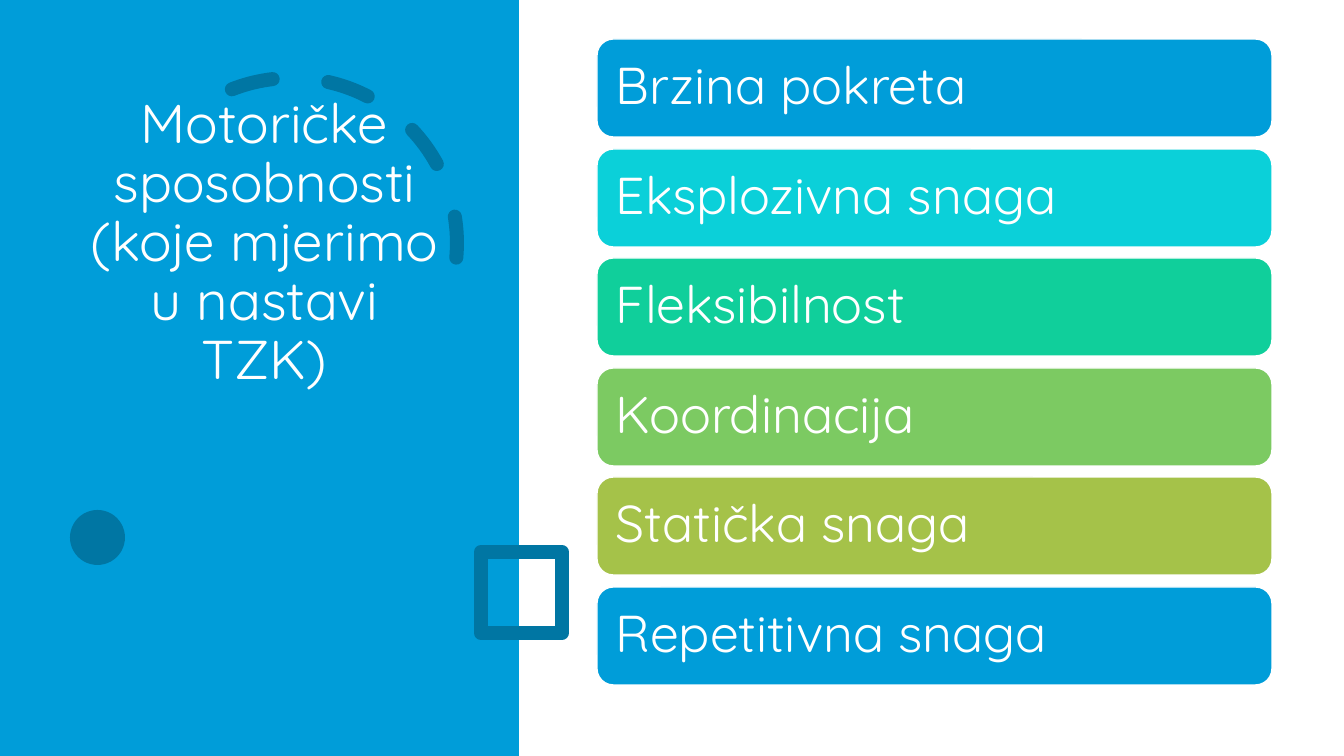
from dataclasses import dataclass

import pptx
import pptx.dml.color
import pptx.enum.dml
import pptx.enum.shapes
import pptx.enum.text
import pptx.oxml
import pptx.oxml.ns
import pptx.util

SHAPE = pptx.enum.shapes.MSO_SHAPE
ALIGN = pptx.enum.text.PP_ALIGN
ANCHOR = pptx.enum.text.MSO_ANCHOR
SLIDE_W, SLIDE_H = 1344, 756
EMU_PER_PX = pptx.util.Inches(1) / 100.8


@dataclass(frozen=True)
class Theme:
    font: str = "Quicksand"
    title_size: int = 39
    bar_size: int = 37
    outline: int = 10
    white: str = "FFFFFF"
    blue: str = "009DD9"
    dark_blue: str = "0076A3"
    cyan: str = "0BD0D9"
    teal: str = "10CF9B"
    green: str = "7CCA62"
    olive: str = "A5C249"


THEME = Theme()

ABILITIES = [
    ("Brzina pokreta", THEME.blue),
    ("Eksplozivna snaga", THEME.cyan),
    ("Fleksibilnost", THEME.teal),
    ("Koordinacija", THEME.green),
    ("Statička snaga", THEME.olive),
    ("Repetitivna snaga", THEME.blue),
]


def px(n):
    return pptx.util.Emu(round(n * EMU_PER_PX))


def rgb(color):
    return pptx.dml.color.RGBColor.from_string(color)


def set_all(target, values):
    for name, value in values.items():
        setattr(target, name, value)


def add_shape(s, kind, box, fill=None, line=None, width=1):
    sp = s.shapes.add_shape(kind, *map(px, box))
    sp.shadow.inherit = False
    if fill:
        sp.fill.solid()
        sp.fill.fore_color.rgb = rgb(fill)
    else:
        sp.fill.background()
    if line:
        sp.line.color.rgb = rgb(line)
        sp.line.width = pptx.util.Pt(width)
    else:
        sp.line.fill.background()
    return sp


def round_joins(sp):
    ln = sp.line._get_or_add_ln()
    ln.set("cap", "rnd")
    ln.append(pptx.oxml.parse_xml(f'<a:round {pptx.oxml.ns.nsdecls("a")}/>'))


def write_text(sp, text, size, align, frame):
    tf = sp.text_frame
    set_all(tf, {"word_wrap": True, "auto_size": pptx.enum.text.MSO_AUTO_SIZE.NONE, **frame})
    p = tf.paragraphs[0]
    set_all(p, {"alignment": align, "line_spacing": 0.9})
    r = p.add_run()
    r.text = text
    set_all(r.font, {"name": THEME.font, "size": pptx.util.Pt(size)})
    r.font.color.rgb = rgb(THEME.white)


def add_dashed_arc(s):
    sp = add_shape(s, SHAPE.ARC, (127, 78, 330, 330), line=THEME.dark_blue, width=THEME.outline)
    sp.adjustments[0] = 146.13
    sp.adjustments[1] = 0
    sp.rotation = 5.1
    sp.line.dash_style = pptx.enum.dml.MSO_LINE.DASH
    round_joins(sp)


def add_title(s, text):
    sp = s.shapes.title
    box = dict(zip(("left", "top", "width", "height"), map(px, (71, 88, 387, 308))))
    set_all(sp, box)
    write_text(sp, text, THEME.title_size, ALIGN.CENTER, {"vertical_anchor": ANCHOR.BOTTOM})
    sp.element.getparent().append(sp.element)


def add_square(s):
    sp = add_shape(s, SHAPE.RECTANGLE, (481, 552, 81, 81), line=THEME.dark_blue, width=THEME.outline)
    round_joins(sp)


def add_bars(s, abilities, top=39, pitch=109.6):
    frame = {"vertical_anchor": ANCHOR.MIDDLE, "margin_left": px(14), "margin_right": px(14)}
    for i, (name, color) in enumerate(abilities):
        box = (597, round(top + i * pitch), 675, 98)
        sp = add_shape(s, SHAPE.ROUNDED_RECTANGLE, box, color, THEME.white)
        write_text(sp, name, THEME.bar_size, ALIGN.LEFT, frame)


def main():
    prs = pptx.Presentation()
    set_all(prs, {"slide_width": px(SLIDE_W), "slide_height": px(SLIDE_H)})
    s = prs.slides.add_slide(prs.slide_layouts[5])
    add_shape(s, SHAPE.RECTANGLE, (0, 0, 519, SLIDE_H), THEME.blue)
    add_dashed_arc(s)
    add_title(s, "Motoričke sposobnosti (koje mjerimo u nastavi TZK)")
    add_shape(s, SHAPE.OVAL, (70, 510, 55, 55), THEME.dark_blue)
    add_square(s)
    add_bars(s, ABILITIES)
    prs.save("out.pptx")


if __name__ == "__main__":
    main()
